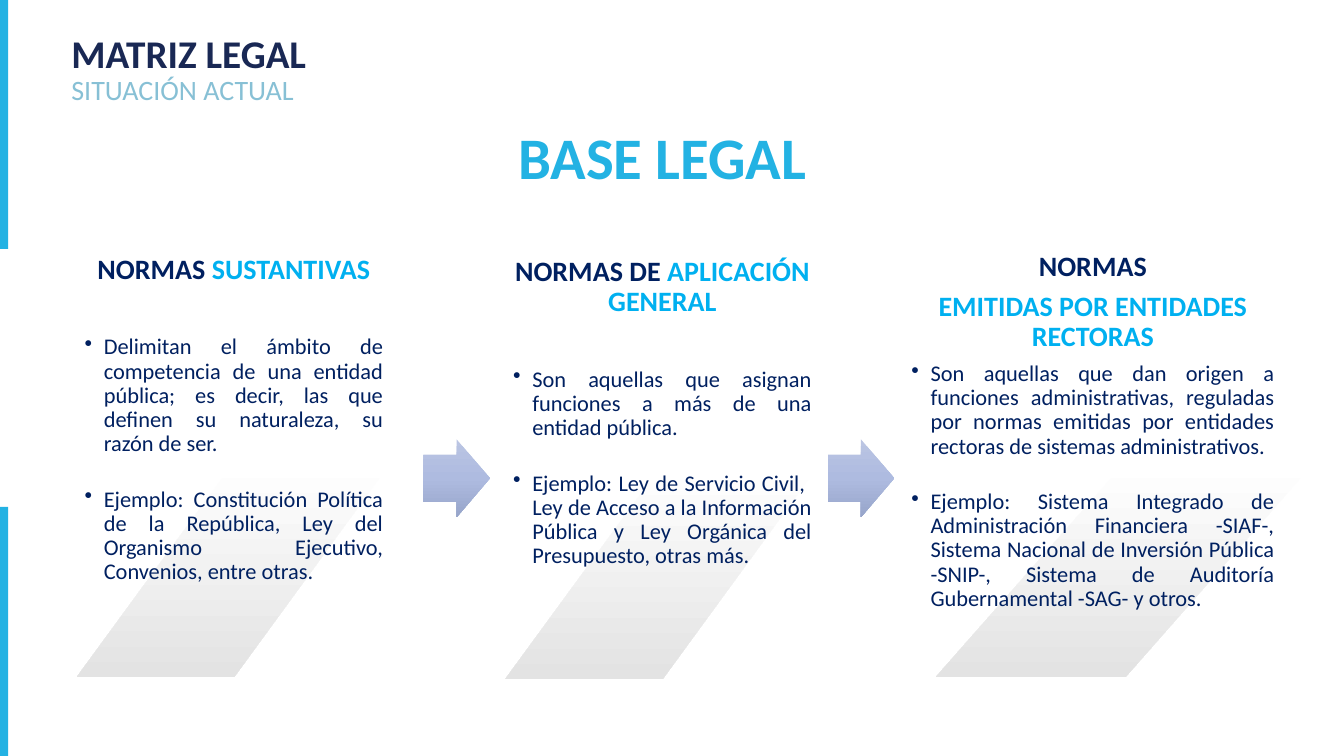
from copy import deepcopy
from pptx import Presentation
from pptx.dml.color import RGBColor
from pptx.enum.shapes import MSO_SHAPE
from pptx.enum.text import MSO_ANCHOR, MSO_AUTO_SIZE, PP_ALIGN
from pptx.oxml import parse_xml
from pptx.oxml.ns import nsdecls, qn
from pptx.util import Inches, Pt

CYAN = RGBColor(0x23, 0xB2, 0xE3)
SKY = RGBColor(0x00, 0xB0, 0xF0)
NAVY = RGBColor(0x00, 0x20, 0x60)
INDIGO = RGBColor(0x19, 0x28, 0x54)
PALE_BLUE = RGBColor(0x87, 0xC0, 0xD5)
WHITE = RGBColor(0xFF, 0xFF, 0xFF)
GREY = RGBColor(0xE3, 0xE3, 0xE3)
ARROW_COLOURS = [RGBColor(0xBB, 0xC5, 0xE3), RGBColor(0xAE, 0xBB, 0xE0), RGBColor(0x97, 0xA5, 0xCA)]
CHEVRON_COLOURS = [WHITE, WHITE, GREY]

deck = Presentation()
deck.slide_width = Inches(13.33)
deck.slide_height = Inches(7.5)
page = deck.slides.add_slide(deck.slide_layouts[5])


def add_span(para, text, size, colour, bold):
    span = para.add_run()
    span.text = text
    span.font.name = "Calibri"
    span.font.size = Pt(size)
    span.font.bold = bold
    span.font.color.rgb = colour


def add_gradient_shape(kind, left, top, width, height, colours):
    shape = page.shapes.add_shape(kind, Inches(left), Inches(top), Inches(width), Inches(height))
    shape.shadow.inherit = False
    shape.line.fill.background()
    shape.fill.gradient()
    shape.fill.gradient_angle = 270
    first_stop = shape.fill.gradient_stops[0]
    stop_element = shape._element.spPr.find(".//" + qn("a:gs"))
    stop_element.addnext(deepcopy(stop_element))
    for stop, position, colour in zip(shape.fill.gradient_stops, (0, 0.5, 1), colours):
        stop.position = position
        stop.color.rgb = colour
    return shape


title = page.shapes.title
title.left, title.top = Inches(2.93), Inches(0.36)
title.width, title.height = Inches(7.28), Inches(2.46)
title.text_frame.auto_size = MSO_AUTO_SIZE.NONE
title.text_frame.vertical_anchor = MSO_ANCHOR.MIDDLE
para = title.text_frame.paragraphs[0]
para.alignment = PP_ALIGN.CENTER
para.line_spacing = 0.9
add_span(para, "BASE LEGAL", 42, CYAN, True)

BAR_HEIGHT = Inches(2.47)
for bar_top in (0, deck.slide_height - BAR_HEIGHT):
    bar = page.shapes.add_shape(MSO_SHAPE.RECTANGLE, 0, bar_top, Inches(0.08), BAR_HEIGHT)
    bar.shadow.inherit = False
    bar.fill.solid()
    bar.fill.fore_color.rgb = CYAN
    bar.line.fill.background()

COLUMN_HEIGHT = 4.27
columns = [
    {
        "chevron": (0.76, 2.45), "text": (0.76, 2.45), "width": 3.12, "heading_gap": 36,
        "headings": [[("NORMAS ", NAVY), ("SUSTANTIVAS", SKY)]],
        "bullets": [
            "Delimitan el ámbito de competencia de una entidad pública; es decir, las que definen su naturaleza, su razón de ser.",
            "Ejemplo: Constitución Política de la República, Ley del Organismo Ejecutivo, Convenios, entre otras.",
        ],
    },
    {
        "chevron": (5.01, 2.47), "text": (5.01, 2.47), "width": 3.12, "heading_gap": 36,
        "headings": [[("NORMAS DE ", NAVY), ("APLICACIÓN GENERAL", SKY)]],
        "bullets": [
            "Son aquellas que asignan funciones a más de una entidad pública.",
            "Ejemplo: Ley de Servicio Civil,  Ley de Acceso a la Información Pública y Ley Orgánica del Presupuesto, otras más.",
        ],
    },
    {
        "chevron": (9.28, 2.45), "text": (8.96, 2.42), "width": 3.76, "heading_gap": 7,
        "headings": [[("NORMAS", NAVY)], [("EMITIDAS POR ENTIDADES RECTORAS", SKY)]],
        "bullets": [
            "Son aquellas que dan origen a funciones administrativas, reguladas por normas emitidas por entidades rectoras de sistemas administrativos.",
            "Ejemplo: Sistema Integrado de Administración Financiera -SIAF-, Sistema Nacional de Inversión Pública -SNIP-, Sistema de Auditoría Gubernamental -SAG- y otros.",
        ],
    },
]

for column in columns:
    add_gradient_shape(MSO_SHAPE.CHEVRON, *column["chevron"], column["width"], COLUMN_HEIGHT, CHEVRON_COLOURS)
    left, top = column["text"]
    box = page.shapes.add_textbox(Inches(left), Inches(top), Inches(column["width"]), Inches(COLUMN_HEIGHT))
    frame = box.text_frame
    frame.word_wrap = True
    frame.margin_left = frame.margin_right = frame.margin_top = frame.margin_bottom = Inches(0.08)
    para = frame.paragraphs[0]
    for heading in column["headings"]:
        para.alignment = PP_ALIGN.CENTER
        para.line_spacing = 0.9
        para.space_after = Pt(column["heading_gap"])
        for text, colour in heading:
            add_span(para, text, 20, colour, True)
        para = frame.add_paragraph()
    for number, bullet in enumerate(column["bullets"]):
        if number:
            para = frame.add_paragraph()
            para.space_before = Pt(22.4)
        para.level = 1
        para.alignment = PP_ALIGN.JUSTIFY
        para.line_spacing = 0.9
        properties = para._p.get_or_add_pPr()
        properties.set("marL", str(Inches(0.19)))
        properties.set("indent", str(-Inches(0.19)))
        properties.append(parse_xml(f'<a:buChar {nsdecls("a")} char="•"/>'))
        add_span(para, bullet, 16, NAVY, False)

for arrow_left in (4.2, 8.21):
    arrow = add_gradient_shape(MSO_SHAPE.RIGHT_ARROW, arrow_left, 4.36, 0.66, 0.77, ARROW_COLOURS)
    arrow.adjustments[0] = 0.6
    arrow.adjustments[1] = 0.5

header = page.shapes.add_textbox(Inches(0.61), Inches(0.34), Inches(4.86), Inches(0.72))
header.text_frame.word_wrap = True
header.text_frame.vertical_anchor = MSO_ANCHOR.MIDDLE
para = header.text_frame.paragraphs[0]
para.line_spacing = 0.9
add_span(para, "MATRIZ LEGAL", 28, INDIGO, True)
para.add_line_break()
add_span(para, "SITUACIÓN ACTUAL", 20, PALE_BLUE, False)

deck.save("out.pptx")
